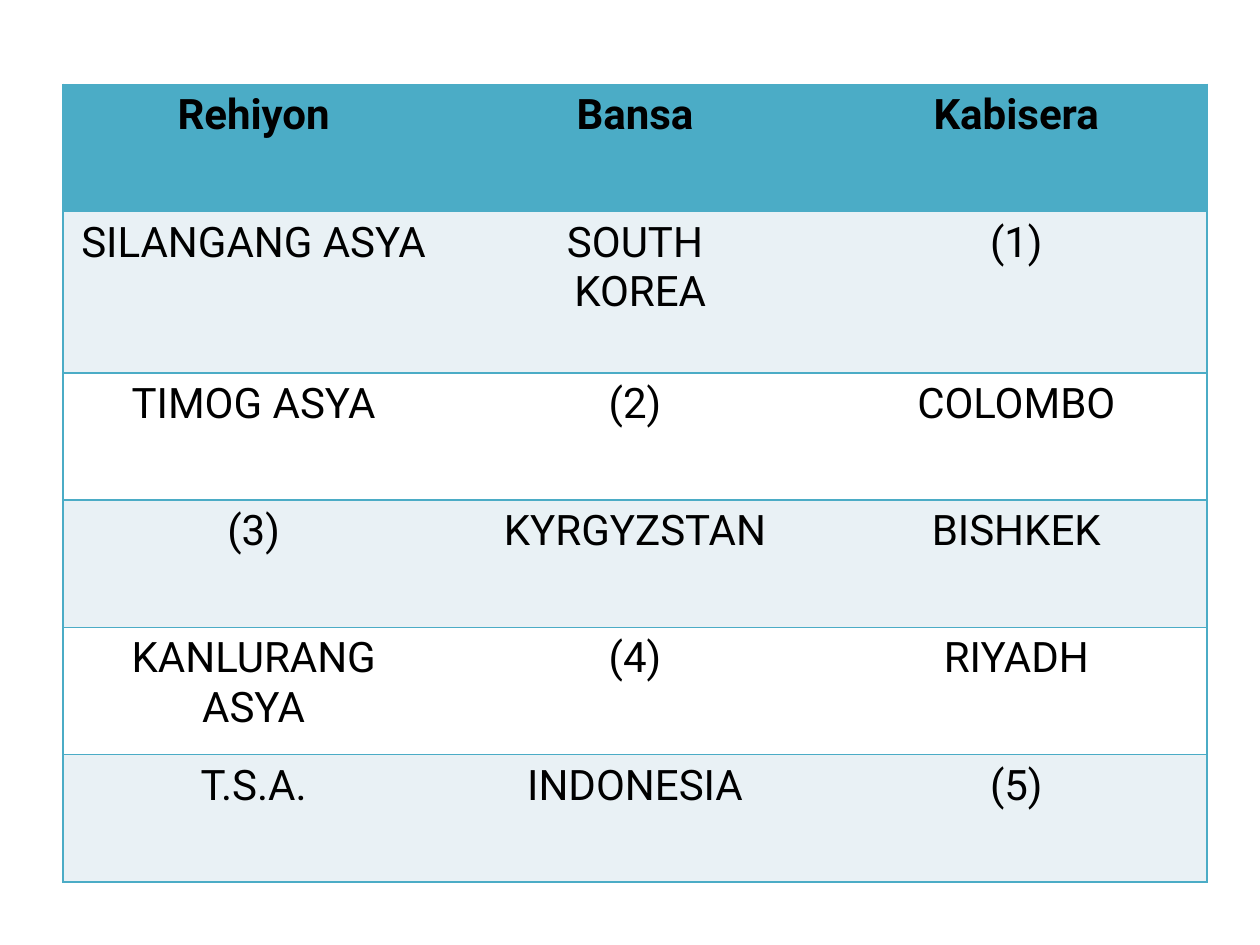
from pptx import Presentation
from pptx.dml.color import RGBColor
from pptx.enum.text import PP_ALIGN
from pptx.oxml import parse_xml
from pptx.oxml.ns import nsdecls
from pptx.util import Inches, Pt

TEAL, PALE, WHITE, BLACK = "4BACC6", "E9F1F5", "FFFFFF", "000000"
NO_STYLE = "{2D5ABB26-0587-4C30-8999-92F81FD0307C}"
ROWS = [
    ("Rehiyon", "Bansa", "Kabisera"),
    ("SILANGANG ASYA", "SOUTH\n KOREA", "(1)"),
    ("TIMOG ASYA", "(2)", "COLOMBO"),
    ("(3)", "KYRGYZSTAN", "BISHKEK"),
    ("KANLURANG ASYA", "(4)", "RIYADH"),
    ("T.S.A.", "INDONESIA", "(5)"),
]
ROW_HEIGHTS = [1.01, 1.28, 1.01, 1.01, 1.01, 1.01]


def color(hex_value):
    return RGBColor.from_string(hex_value)


def set_borders(cell, sides):
    """Draw 1 pt teal lines on the given sides, in the order L, R, T, B."""
    properties = cell._tc.get_or_add_tcPr()
    for position, side in enumerate(sides):
        properties.insert(position, parse_xml(
            f'<a:ln{side} {nsdecls("a")} w="{Pt(1)}"><a:solidFill>'
            f'<a:srgbClr val="{TEAL}"/></a:solidFill></a:ln{side}>'))


def format_cell(cell, text, fill, bold):
    cell.text = text
    cell.fill.solid()
    cell.fill.fore_color.rgb = color(fill)
    for paragraph in cell.text_frame.paragraphs:
        paragraph.alignment = PP_ALIGN.CENTER
        font = paragraph.runs[0].font
        for name, value in {"name": "Roboto", "size": Pt(24), "bold": bold}.items():
            setattr(font, name, value)
        font.color.rgb = color(BLACK)


def add_capitals_table(slide, left, top, width, row_heights):
    column_count = len(ROWS[0])
    table = slide.shapes.add_table(
        len(ROWS), column_count, left, top, width, sum(row_heights)).table
    table._tbl.tblPr[0].text = NO_STYLE
    for column in table.columns:
        column.width = width // column_count
    for row_index, texts in enumerate(ROWS):
        table.rows[row_index].height = row_heights[row_index]
        is_header = row_index == 0
        fill = TEAL if is_header else (WHITE, PALE)[row_index % 2]
        for column_index, text in enumerate(texts):
            cell = table.cell(row_index, column_index)
            format_cell(cell, text, fill, is_header)
            set_borders(cell, {0: "LTB", column_count - 1: "RTB"}.get(column_index, "TB"))


def main():
    presentation = Presentation()
    presentation.slide_width, presentation.slide_height = Inches(10), Inches(7.5)
    slide = presentation.slides.add_slide(presentation.slide_layouts[6])
    add_capitals_table(slide, Inches(0.5), Inches(0.67), Inches(9.08),
                       [Inches(height) for height in ROW_HEIGHTS])
    presentation.save("out.pptx")


if __name__ == "__main__":
    main()
